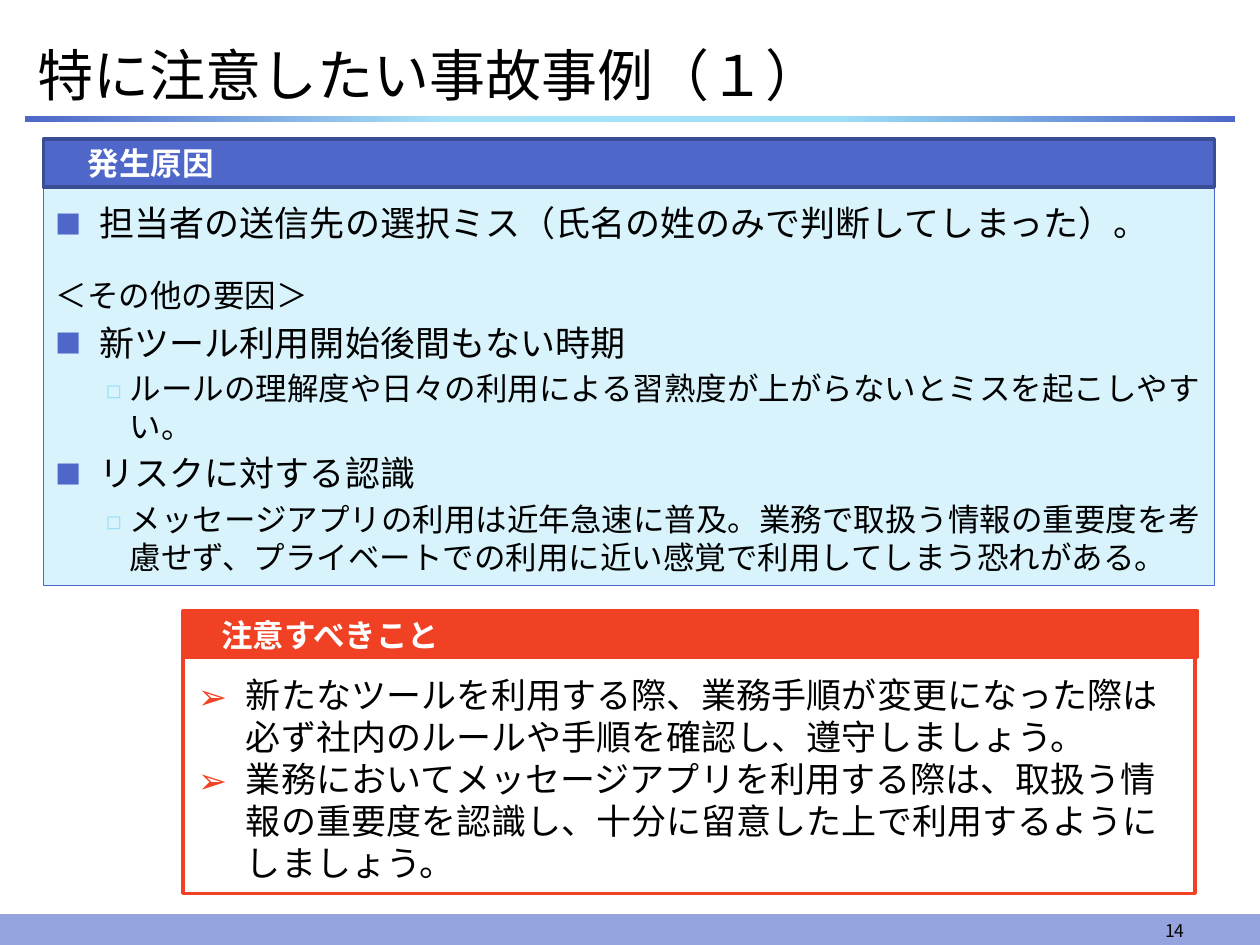
import pptx
import pptx.dml.color
import pptx.enum.dml
import pptx.enum.shapes
import pptx.enum.text
import pptx.oxml
import pptx.oxml.ns
import pptx.util
from dataclasses import dataclass

Cm, Pt = pptx.util.Cm, pptx.util.Pt
Align = pptx.enum.text.PP_ALIGN
Anchor = pptx.enum.text.MSO_ANCHOR
FONT = "Noto Sans CJK JP"
LEAD = 1.2  # line pitch as a multiple of the text size
COLORS = {
    "black": "000000", "white": "FFFFFF", "blue": "4E67C8",
    "navy": "3A4C94", "pale": "D8F3FC", "sky": "9EE0F7",
    "cyan": "A9E3F8", "red": "F14124", "foot": "95A4DE",
}


@dataclass
class Box:
    left: float
    top: float
    width: float
    height: float
    fill: str = ""
    line: str = ""
    weight: float = 0.75


@dataclass
class Style:
    size: float
    indent: float = 0
    hang: float = 0
    mark: str = ""
    tint: str = ""
    scale: int = 100


@dataclass
class Item:
    text: str
    style: Style
    before: float = 0


def get_rgb(name: str) -> pptx.dml.color.RGBColor:
    return pptx.dml.color.RGBColor.from_string(COLORS[name])


def draw_box(slide, box: Box):
    """Draw a plain box; a box without fill is a text box."""
    place = [Cm(v) for v in (box.left, box.top, box.width, box.height)]
    if not box.fill:
        return slide.shapes.add_textbox(*place)
    shape = slide.shapes.add_shape(
        pptx.enum.shapes.MSO_SHAPE.RECTANGLE, *place)
    shape.shadow.inherit = False
    shape.fill.solid()
    shape.fill.fore_color.rgb = get_rgb(box.fill)
    if box.line:
        shape.line.color.rgb = get_rgb(box.line)
        shape.line.width = Pt(box.weight)
    else:
        shape.line.fill.background()
    return shape


def set_frame(shape, anchor, insets=(0.25, 0.13, 0.25, 0.13)):
    frame = shape.text_frame
    frame.word_wrap = True
    frame.vertical_anchor = anchor
    (frame.margin_left, frame.margin_top,
     frame.margin_right, frame.margin_bottom) = map(Cm, insets)
    return frame


def set_font(para, size: float, color: str = "black", bold: bool = False):
    for run in para.runs:
        run.font.name = FONT
        run.font.size = Pt(size)
        run.font.bold = bold
        run.font.color.rgb = get_rgb(color)
        east = pptx.oxml.parse_xml(
            f'<a:ea {pptx.oxml.ns.nsdecls("a")} typeface="{FONT}"/>')
        run.font._element.find(pptx.oxml.ns.qn("a:latin")).addnext(east)


def add_label(shape, text: str, size: float, color: str = "black",
              bold: bool = False, align=Align.LEFT, anchor=Anchor.MIDDLE,
              left: float = 0.25):
    frame = set_frame(shape, anchor, (left, 0.03, 0.25, 0.03))
    frame.text = text
    para = frame.paragraphs[0]
    para.alignment = align
    set_font(para, size, color, bold)


def set_mark(para, style: Style):
    """Give a paragraph its hanging indent and bullet."""
    props = para._p.get_or_add_pPr()
    props.set("marL", str(Cm(style.indent)))
    props.set("indent", str(-Cm(style.hang)))
    names = pptx.oxml.ns.nsdecls("a")
    for part in (
        f'<a:buClr {names}><a:srgbClr val="{COLORS[style.tint]}"/></a:buClr>',
        f'<a:buSzPct {names} val="{style.scale * 1000}"/>',
        f'<a:buFont {names} typeface="{FONT}"/>',
        f'<a:buChar {names} char="{style.mark}"/>',
    ):
        props.append(pptx.oxml.parse_xml(part))


def add_list(frame, items: list[Item]):
    for index, item in enumerate(items):
        para = frame.add_paragraph() if index else frame.paragraphs[0]
        para.text = item.text
        para.alignment = Align.LEFT
        para.line_spacing = Pt(item.style.size * LEAD)
        para.space_before = Pt(item.before)
        set_font(para, item.style.size)
        if item.style.mark:
            set_mark(para, item.style)


def draw_rule(slide, box: Box, stops: list[tuple[int, str]]):
    """Draw the bar below the title with a sideways gradient."""
    fill = draw_box(slide, box).fill
    fill.gradient()
    fill.gradient_angle = 0
    rows = fill._fill._gradFill.find(pptx.oxml.ns.qn("a:gsLst"))
    for row in list(rows):
        rows.remove(row)
    for pos, name in stops:
        rows.append(pptx.oxml.parse_xml(
            f'<a:gs {pptx.oxml.ns.nsdecls("a")} pos="{pos * 1000}">'
            f'<a:srgbClr val="{COLORS[name]}"/></a:gs>'))


MAIN = Style(20, 0.89, 0.89, "■", "blue", 75)
SUB = Style(18, 1.5, 0.48, "◻", "sky", 80)
NOTE = Style(18)
ARROW = Style(20, 0.97, 0.97, "➢", "red")

CAUSES = [
    Item("担当者の送信先の選択ミス（氏名の姓のみで判断してしまった）。", MAIN),
    Item("＜その他の要因＞", NOTE, 18.5),
    Item("新ツール利用開始後間もない時期", MAIN, 4),
    Item("ルールの理解度や日々の利用による習熟度が上がらないとミスを起こしやすい。", SUB, 3.6),
    Item("リスクに対する認識", MAIN, 4),
    Item("メッセージアプリの利用は近年急速に普及。業務で取扱う情報の重要度を考慮せず、"
         "プライベートでの利用に近い感覚で利用してしまう恐れがある。", SUB, 3.6),
]
ADVICE = [
    Item("新たなツールを利用する際、業務手順が変更になった際は"
         "必ず社内のルールや手順を確認し、遵守しましょう。", ARROW),
    Item("業務においてメッセージアプリを利用する際は、取扱う情報の重要度を認識し、"
         "十分に留意した上で利用するようにしましょう。", ARROW),
]


def main():
    deck = pptx.Presentation()
    deck.slide_width, deck.slide_height = Cm(25.4), Cm(19.05)
    slide = deck.slides.add_slide(deck.slide_layouts[6])

    # Footer band, title rule, title and page number
    draw_box(slide, Box(0, 18.44, 25.4, 0.61, "foot", "foot"))
    draw_rule(slide, Box(0.5, 2.33, 24.4, 0.13, "blue"),
              [(0, "blue"), (35, "cyan"), (67, "sky"), (100, "blue")])
    add_label(draw_box(slide, Box(0.5, 0.66, 24.4, 1.65)),
              "特に注意したい事故事例（１）", 32)
    add_label(draw_box(slide, Box(18.21, 18.31, 5.92, 0.7)), "14", 10,
              align=Align.RIGHT, anchor=Anchor.BOTTOM)

    # Advice panel
    panel = draw_box(slide, Box(3.69, 13.26, 20.4, 4.75, "white", "red", 2))
    add_list(set_frame(panel, Anchor.MIDDLE, (0.3, 0.1, 0.3, 0)), ADVICE)

    # Cause panel, with its list in a text box on top
    draw_box(slide, Box(0.88, 3.63, 23.6, 8.18, "pale", "blue"))
    body = draw_box(slide, Box(0.87, 3.94, 23.64, 7.9))
    add_list(set_frame(body, Anchor.TOP), CAUSES)

    # Panel headings
    add_label(draw_box(slide, Box(3.69, 12.32, 20.45, 0.94, "red", "red", 2)),
              "注意すべきこと", 18, "white", True, left=0.77)
    add_label(draw_box(slide, Box(0.88, 2.8, 23.6, 0.97, "blue", "navy", 2)),
              "発生原因", 18, "white", True, left=0.89)

    deck.save("out.pptx")


if __name__ == "__main__":
    main()
